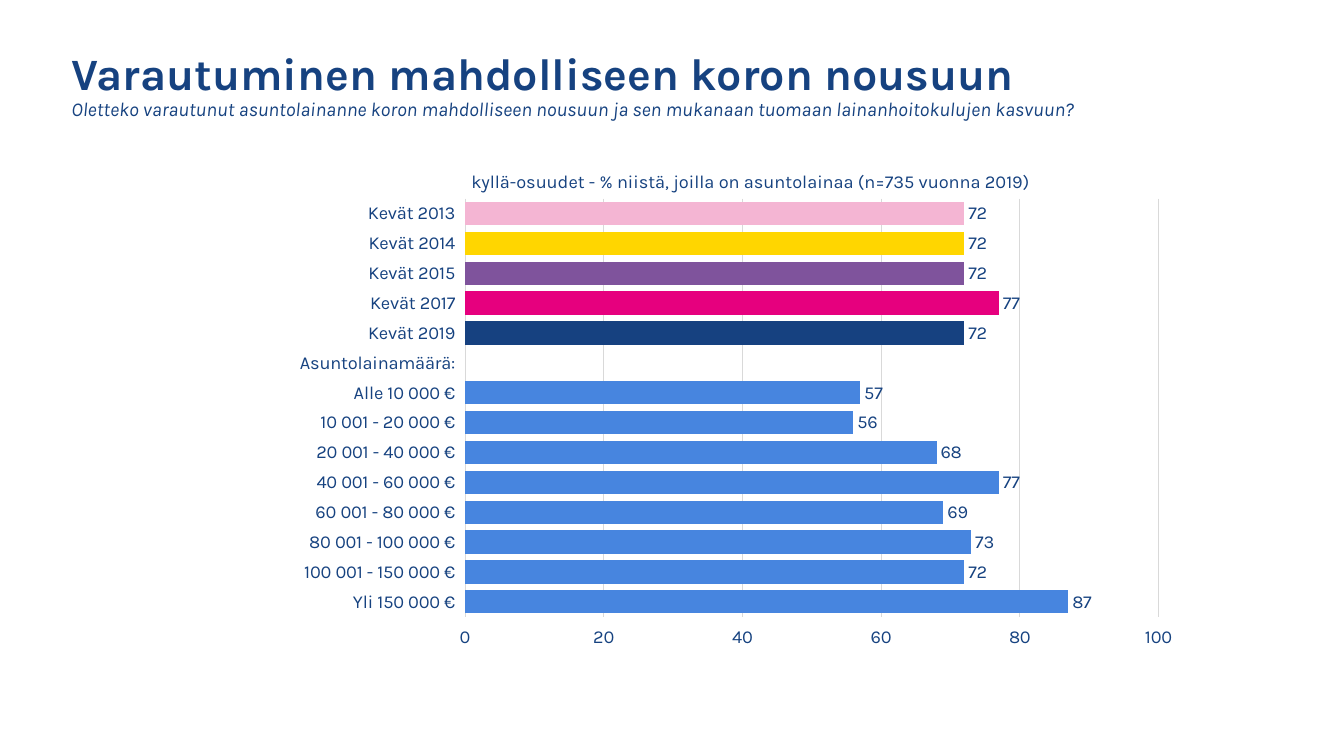
"""Build a slide on households' readiness for rising mortgage rates."""
from dataclasses import dataclass

import pptx
import pptx.chart.data
import pptx.dml.color
import pptx.enum.chart
import pptx.enum.text
import pptx.oxml
import pptx.oxml.ns
import pptx.util

EMU_PER_PX = 9525


@dataclass(frozen=True)
class Theme:
    """Hold the colours, font and type sizes."""
    font: str = "Karla"
    ink: str = "164280"
    grid: str = "D9D9D9"
    bar: str = "4785DF"
    year_bars: tuple = ("F4B5D3", "FFD600", "7F539C", "E6007E", "164180")
    title_size: int = 32
    question_size: int = 14
    chart_size: int = 13


THEME = Theme()

YES_SHARES = {
    "Kevät 2013": 72,
    "Kevät 2014": 72,
    "Kevät 2015": 72,
    "Kevät 2017": 77,
    "Kevät 2019": 72,
    "Asuntolainamäärä:": None,
    "Alle 10 000 €": 57,
    "10 001 - 20 000 €": 56,
    "20 001 - 40 000 €": 68,
    "40 001 - 60 000 €": 77,
    "60 001 - 80 000 €": 69,
    "80 001 - 100 000 €": 73,
    "100 001 - 150 000 €": 72,
    "Yli 150 000 €": 87,
}
PLOT_AREA = {"x": 0.346, "y": 0.09, "w": 0.516, "h": 0.7}


def px(length):
    """Convert pixels to EMU."""
    return pptx.util.Emu(length * EMU_PER_PX)


def rgb(value):
    """Convert a hex string to a colour."""
    return pptx.dml.color.RGBColor.from_string(value)


def style_font(font, size):
    """Apply the theme's typeface and ink at a size."""
    font.name = THEME.font
    font.size = pptx.util.Pt(size)
    font.color.rgb = rgb(THEME.ink)


def add_text(slide, text, box, size, inset_left=12, wrap=True):
    """Add a one-paragraph text box and return its paragraph."""
    frame = slide.shapes.add_textbox(*map(px, box)).text_frame
    frame.word_wrap = wrap
    frame.auto_size = pptx.enum.text.MSO_AUTO_SIZE.SHAPE_TO_FIT_TEXT
    frame.margin_left, frame.margin_right = px(inset_left), px(12)
    frame.margin_top = frame.margin_bottom = px(7)
    paragraph = frame.paragraphs[0]
    paragraph.text = text
    style_font(paragraph.font, size)
    return paragraph


def set_plot_area(chart, fractions):
    """Fix the inner plot area as fractions of the chart."""
    modes = "".join(f'<c:{side}Mode val="edge"/>' for side in "xy")
    sizes = "".join(f'<c:{key} val="{value}"/>' for key, value in fractions.items())
    layout = pptx.oxml.parse_xml(
        f'<c:layout {pptx.oxml.ns.nsdecls("c")}><c:manualLayout>'
        f'<c:layoutTarget val="inner"/>{modes}{sizes}</c:manualLayout></c:layout>'
    )
    plot_area = chart.plots[0]._element.getparent()
    for existing in plot_area.findall(pptx.oxml.ns.qn("c:layout")):
        plot_area.remove(existing)
    plot_area.insert(0, layout)


def style_line(line, width):
    """Draw a thin grey line."""
    line.color.rgb = rgb(THEME.grid)
    line.width = pptx.util.Pt(width)


def style_axes(chart):
    """Run categories downwards and label values from 0 to 100 at the bottom."""
    enums = pptx.enum.chart
    categories, values = chart.category_axis, chart.value_axis
    for axis in (categories, values):
        axis.major_tick_mark = axis.minor_tick_mark = enums.XL_TICK_MARK.NONE
    categories.reverse_order = True
    categories.tick_label_position = enums.XL_TICK_LABEL_POSITION.LOW
    style_line(categories.format.line, 0.25)
    values.minimum_scale, values.maximum_scale, values.major_unit = 0, 100, 20
    values.tick_label_position = enums.XL_TICK_LABEL_POSITION.HIGH
    values.format.line.fill.background()
    style_line(values.major_gridlines.format.line, 0.75)


def fill_bar(bar, colour):
    """Fill a series or a point with one colour."""
    bar.format.fill.solid()
    bar.format.fill.fore_color.rgb = rgb(colour)


def add_share_chart(slide, shares, box):
    """Add the bar chart of yes shares."""
    data = pptx.chart.data.CategoryChartData()
    data.categories = shares.keys()
    data.add_series("Kyllä-osuus", shares.values())
    chart_type = pptx.enum.chart.XL_CHART_TYPE.BAR_CLUSTERED
    chart = slide.shapes.add_chart(chart_type, *map(px, box), data).chart
    chart.has_legend = chart.has_title = False
    style_font(chart.font, THEME.chart_size)
    set_plot_area(chart, PLOT_AREA)
    style_axes(chart)

    plot = chart.plots[0]
    plot.gap_width = 28
    plot.vary_by_categories = False
    series = plot.series[0]
    fill_bar(series, THEME.bar)
    for index, colour in enumerate(THEME.year_bars):
        fill_bar(series.points[index], colour)
    labels = series.data_labels
    labels.show_value = True
    labels.position = pptx.enum.chart.XL_LABEL_POSITION.OUTSIDE_END


def main():
    """Build and save the slide."""
    presentation = pptx.Presentation()
    presentation.slide_width, presentation.slide_height = px(1280), px(720)
    slide = presentation.slides.add_slide(presentation.slide_layouts[6])

    add_share_chart(slide, YES_SHARES, (0, 138, 1280, 569))
    add_text(
        slide, "kyllä-osuudet - % niistä, joilla on asuntolainaa (n=735 vuonna 2019)",
        (444, 155, 827, 34), THEME.chart_size, inset_left=5,
    )
    question = add_text(
        slide,
        "Oletteko varautunut asuntolainanne koron mahdolliseen nousuun "
        "ja sen mukanaan tuomaan lainanhoitokulujen kasvuun?",
        (56, 88, 1169, 34), THEME.question_size,
    )
    question.line_spacing = 0.9
    question.font.italic = True
    title = add_text(
        slide, "Varautuminen mahdolliseen koron nousuun",
        (56, 37, 946, 64), THEME.title_size, wrap=False,
    )
    title.font.bold = True
    presentation.save("out.pptx")


if __name__ == "__main__":
    main()
